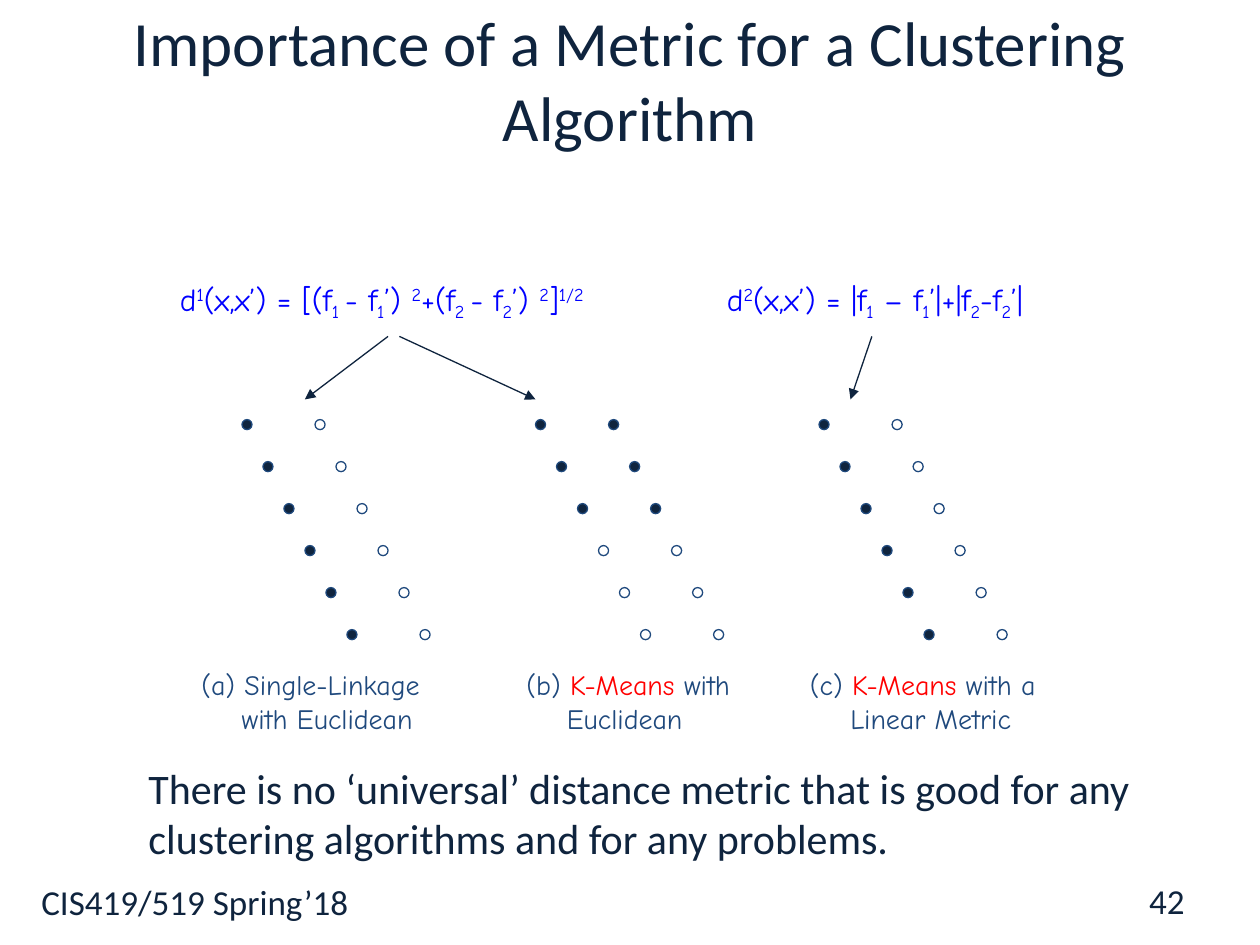
from lxml import etree
from pptx import Presentation
from pptx.dml.color import RGBColor
from pptx.enum import shapes, text
from pptx.oxml import ns
from pptx.util import Inches, Pt

NAVY = RGBColor(0x0F, 0x24, 0x3E)
BLUE = RGBColor(0x1F, 0x49, 0x7D)
PURE = RGBColor(0x00, 0x00, 0xFF)
RED = RGBColor(0xFF, 0x00, 0x00)
SANS, COMIC = "Calibri", "Comic Neue"

# Content
TITLE = "Importance of a Metric for a Clustering Algorithm"
CLAIM = ("There is no ‘universal’ distance metric that is good for any "
         "clustering algorithms and for any problems.")
COURSE, PAGE = "CIS419/519 Spring’18", "42"
UP, DOWN = 30, -25  # script offsets in percent
FORMULAS = [
    ((1.33, 2.17, 4.17, 0.4),
     [("d", 0), ("1", UP), ("(x,x’) = [(f", 0), ("1 ", DOWN), ("- f", 0),
      ("1", DOWN), ("’) ", 0), ("2", UP), ("+(f", 0), ("2 ", DOWN),
      ("- f", 0), ("2", DOWN), ("’) ", 0), ("2", UP), ("]", 0), ("1/2", UP)]),
    ((5.67, 2.17, 3.92, 0.4),
     [("d", 0), ("2", UP), ("(x,x’) = |f", 0), ("1", DOWN), (" – f", 0),
      ("1", DOWN), ("’|+|f", 0), ("2", DOWN), ("-f", 0), ("2", DOWN),
      ("’|", 0)]),
]
# Left edge of the dots, filled dots in each column, caption box, caption
PANELS = [
    (1.92, (6, 0), (1.5, 2.25), [("(a) Single-Linkage with Euclidean", BLUE)]),
    (4.25, (3, 3), (4.08, 2.42),
     [("(b) ", BLUE), ("K-Means", RED), (" with Euclidean", BLUE)]),
    (6.5, (6, 0), (6.33, 2.5),
     [("(c) ", BLUE), ("K-Means", RED), (" with a Linear Metric", BLUE)]),
]
ARROWS = [(3.08, 2.42), (3.17, 4.25), (6.92, 6.75)]  # x at top, x at tip
ROWS, DOT, TOP = 6, 0.08, 3.33
STEP_X, STEP_Y, GAP = 1 / 6, 1 / 3, 0.58

prs = Presentation()
prs.slide_width, prs.slide_height = Inches(10), Inches(7.5)
slide = prs.slides.add_slide(prs.slide_layouts[5])


def style(run, size, face, color):
    run.font.size, run.font.name = Pt(size), face
    run.font.color.rgb = color


def add_text(box, parts, size, face):
    """Add a text box; each part is (words, color, script offset)."""
    frame = slide.shapes.add_textbox(*map(Inches, box)).text_frame
    frame.word_wrap = True
    para = frame.paragraphs[0]
    for words, color, shift in parts:
        run = para.add_run()
        run.text = words
        style(run, size, face, color)
        if shift:
            run.font._element.set("baseline", str(shift * 1000))
    return frame


def add_dot(group, x, y, full):
    dot = group.shapes.add_shape(shapes.MSO_SHAPE.OVAL,
                                 *map(Inches, (x, y, DOT, DOT)))
    dot.shadow.inherit = False
    dot.line.color.rgb, dot.line.width = BLUE, Pt(0.75)
    if full:
        dot.fill.solid()
        dot.fill.fore_color.rgb = NAVY
    else:
        dot.fill.background()


def add_arrow(x1, x2):
    arrow = slide.shapes.add_connector(
        shapes.MSO_CONNECTOR.STRAIGHT, *map(Inches, (x1, 2.67, x2, 3.17)))
    arrow.line.color.rgb, arrow.line.width = NAVY, Pt(0.75)
    etree.SubElement(arrow.line._get_or_add_ln(), ns.qn("a:tailEnd"),
                     type="triangle")
    etree.SubElement(arrow._element.spPr, ns.qn("a:effectLst"))


# Title
title = slide.shapes.title
title.left, title.top, title.width, title.height = map(Inches, (0.5, 0, 9, 1.25))
title.text_frame.text = TITLE
title.text_frame.vertical_anchor = text.MSO_ANCHOR.MIDDLE
head = title.text_frame.paragraphs[0]
head.alignment = text.PP_ALIGN.CENTER
style(head.runs[0], 36, SANS, NAVY)

# Formulas and arrows
for box, parts in FORMULAS:
    add_text(box, [(words, PURE, shift) for words, shift in parts], 18, COMIC)
for ends in ARROWS:
    add_arrow(*ends)

# Dot panels with captions
for left, filled, (x, width), parts in PANELS:
    group = slide.shapes.add_group_shape()
    for col, count in enumerate(filled):
        for row in range(ROWS):
            add_dot(group, left + col * GAP + row * STEP_X,
                    TOP + row * STEP_Y, row < count)
    frame = add_text((x, 5.25, width, 0.64),
                     [(words, color, 0) for words, color in parts], 16, COMIC)
    props = frame.paragraphs[0]._p.get_or_add_pPr()
    props.set("marL", str(Inches(0.32)))
    props.set("indent", str(-Inches(0.32)))

# Claim and footer
add_text((1.08, 6, 8.42, 0.91), [(CLAIM, NAVY, 0)], 24, SANS)
add_text((0.23, 6.94, 9.6, 0.56), [(COURSE, NAVY, 0)], 20, SANS)
page = add_text((7.17, 6.95, 2.33, 0.4), [(PAGE, NAVY, 0)], 20, SANS)
page.vertical_anchor = text.MSO_ANCHOR.MIDDLE
page.paragraphs[0].alignment = text.PP_ALIGN.RIGHT

prs.save("out.pptx")
